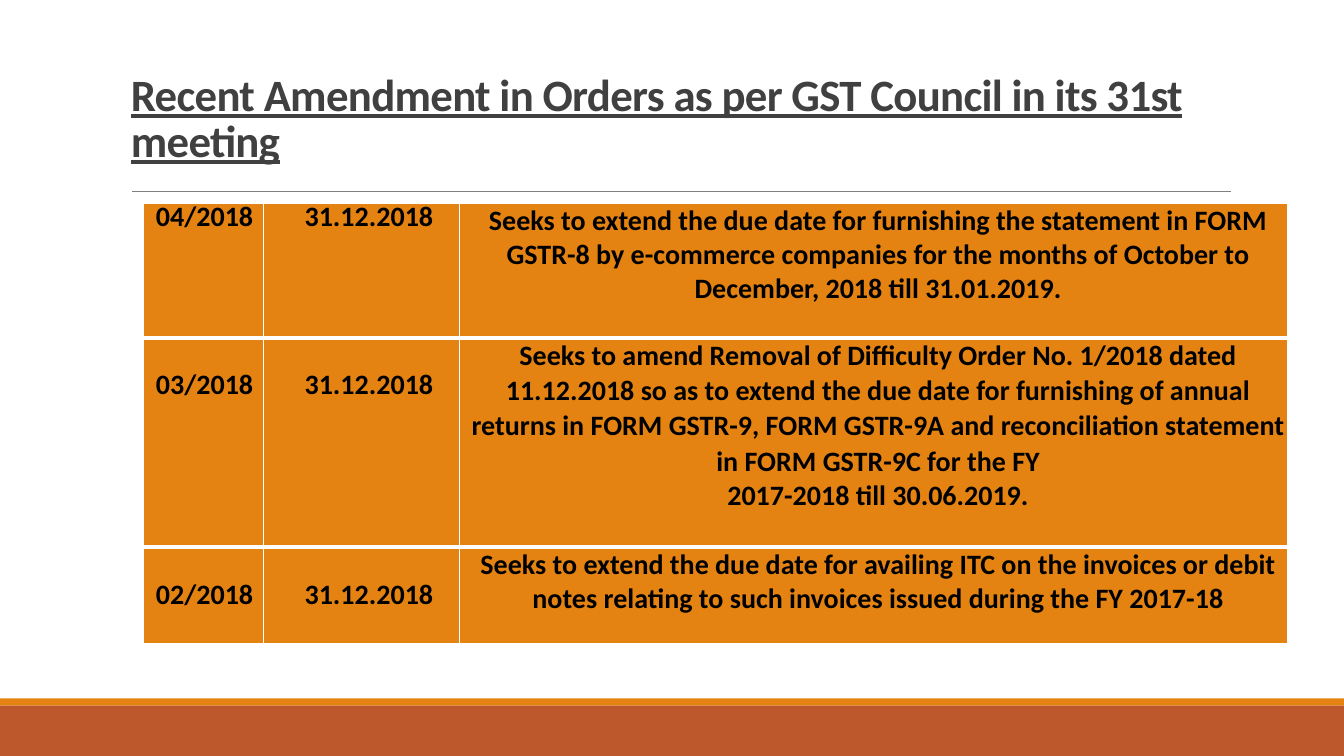
import lxml.etree
import pptx
import pptx.dml.color
import pptx.enum.shapes
import pptx.enum.text
import pptx.oxml.ns
import pptx.util

Inches = pptx.util.Inches
Pt = pptx.util.Pt
RGBColor = pptx.dml.color.RGBColor
qn = pptx.oxml.ns.qn

WHITE = RGBColor(0xFF, 0xFF, 0xFF)
BLACK = RGBColor(0, 0, 0)
CHARCOAL = RGBColor(0x40, 0x40, 0x40)
GRAY = RGBColor(0x80, 0x80, 0x80)
ORANGE = RGBColor(0xE4, 0x83, 0x12)
RUST = RGBColor(0xBD, 0x58, 0x2C)

SLIDE_WIDTH, SLIDE_HEIGHT = 13.33, 7.5
COLUMN_WIDTHS = [1.19, 1.95, 8.21]
COLUMN_INDENTS = [0.03, 0.15, 0.09]
ROW_HEIGHTS = [1.33, 2.08, 0.96]
NUMBER_TOPS = [0, 0.34, 0.34]
DETAIL_SPACINGS = [1, 1.03, 1]
ORDERS = [
    ("04/2018", "31.12.2018", [
        "Seeks to extend the due date for furnishing the statement in FORM "
        "GSTR-8 by e-commerce companies for the months of October to "
        "December, 2018 till 31.01.2019."]),
    ("03/2018", "31.12.2018", [
        "Seeks to amend Removal of Difficulty Order No. 1/2018 dated "
        "11.12.2018 so as to extend the due date for furnishing of annual "
        "returns in FORM GSTR-9, FORM GSTR-9A and reconciliation statement "
        "in FORM GSTR-9C for the FY",
        "2017-2018 till 30.06.2019."]),
    ("02/2018", "31.12.2018", [
        "Seeks to extend the due date for availing ITC on the invoices or "
        "debit notes relating to such invoices issued during the FY 2017-18"]),
]


def add_run(paragraph, text, size, color):
    run = paragraph.add_run()
    run.text = text
    run.font.name = "Calibri"
    run.font.size = Pt(size)
    run.font.bold = True
    run.font.color.rgb = color
    return run


def add_footer(slide, left, top, width, height):
    stripe_height = 0.07
    bands = [(top, stripe_height, ORANGE),
             (top + stripe_height, height - stripe_height, RUST)]
    for band_top, band_height, color in bands:
        band = slide.shapes.add_shape(
            pptx.enum.shapes.MSO_SHAPE.RECTANGLE, Inches(left),
            Inches(band_top), Inches(width), Inches(band_height))
        band.shadow.inherit = False
        band.fill.solid()
        band.fill.fore_color.rgb = color
        band.line.fill.background()


def add_heading(slide, left, top, width, height):
    heading = slide.shapes.add_textbox(
        Inches(left), Inches(top), Inches(width), Inches(height))
    frame = heading.text_frame
    frame.word_wrap = True
    frame.vertical_anchor = pptx.enum.text.MSO_ANCHOR.BOTTOM
    paragraph = frame.paragraphs[0]
    paragraph.line_spacing = 0.85
    run = add_run(
        paragraph,
        "Recent Amendment in Orders as per GST Council in its 31st meeting",
        32, CHARCOAL)
    run.font.underline = True
    run.font._element.set("spc", "-50")

    rule_left, rule_top = left + 0.11, top + height + 0.2
    rule = slide.shapes.add_connector(
        pptx.enum.shapes.MSO_CONNECTOR.STRAIGHT, Inches(rule_left),
        Inches(rule_top), Inches(rule_left + width - 0.1), Inches(rule_top))
    rule.line.color.rgb = GRAY
    rule.line.width = Pt(0.5)
    lxml.etree.SubElement(rule._element.spPr, qn("a:effectLst"))


def add_borders(cell, top, bottom):
    properties = cell._tc.get_or_add_tcPr()
    for side, width in [("L", 1), ("R", 1), ("T", top), ("B", bottom)]:
        border = lxml.etree.SubElement(
            properties, qn(f"a:ln{side}"), w=str(Pt(width)))
        fill = lxml.etree.SubElement(border, qn("a:solidFill"))
        lxml.etree.SubElement(fill, qn("a:srgbClr"), val=str(WHITE))


def fill_cell(cell, paragraphs, indent, top, line_spacing):
    cell.margin_left = Inches(indent)
    cell.margin_top = Inches(top)
    cell.margin_right = cell.margin_bottom = 0
    cell.fill.solid()
    cell.fill.fore_color.rgb = ORANGE
    for index, text in enumerate(paragraphs):
        frame = cell.text_frame
        paragraph = frame.add_paragraph() if index else frame.paragraphs[0]
        paragraph.alignment = pptx.enum.text.PP_ALIGN.CENTER
        paragraph.line_spacing = 1 if index else line_spacing
        add_run(paragraph, text, 20, BLACK)


def add_orders_table(slide, left, top):
    table = slide.shapes.add_table(
        len(ORDERS), len(COLUMN_WIDTHS), Inches(left), Inches(top),
        Inches(sum(COLUMN_WIDTHS)), Inches(sum(ROW_HEIGHTS))).table
    table.first_row = table.horz_banding = False
    for column, width in zip(table.columns, COLUMN_WIDTHS):
        column.width = Inches(width)
    for row_index, (number, date, details) in enumerate(ORDERS):
        table.rows[row_index].height = Inches(ROW_HEIGHTS[row_index])
        number_top = NUMBER_TOPS[row_index]
        contents = [([number], number_top, Pt(21.6)),
                    ([date], number_top, Pt(21.6)),
                    (details, 0, DETAIL_SPACINGS[row_index])]
        for column_index, (paragraphs, text_top, spacing) in enumerate(contents):
            cell = table.cell(row_index, column_index)
            add_borders(cell, 3 if row_index else 1,
                        3 if row_index < len(ORDERS) - 1 else 1)
            fill_cell(cell, paragraphs, COLUMN_INDENTS[column_index],
                      text_top, spacing)


def main():
    presentation = pptx.Presentation()
    presentation.slide_width = Inches(SLIDE_WIDTH)
    presentation.slide_height = Inches(SLIDE_HEIGHT)
    slide = presentation.slides.add_slide(presentation.slide_layouts[6])
    add_footer(slide, 0, 6.93, SLIDE_WIDTH, 0.57)
    add_heading(slide, 1.2, 0.31, 11, 1.39)
    add_orders_table(slide, 1.42, 2.02)
    presentation.save("out.pptx")


if __name__ == "__main__":
    main()
